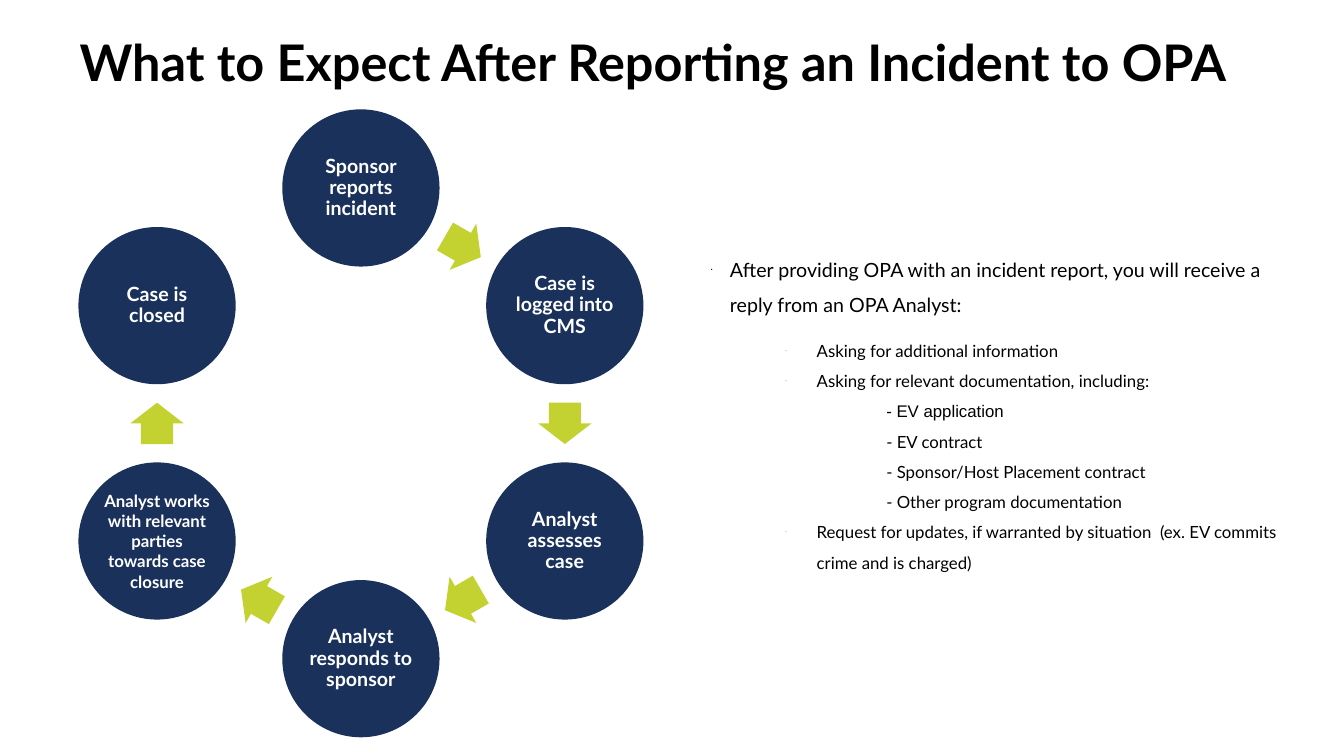
import math

import lxml.etree
import pptx
import pptx.dml.color
import pptx.enum.shapes
import pptx.enum.text
import pptx.oxml.ns
import pptx.util

TITLE = "What to Expect After Reporting an Incident to OPA"
STEPS = [  # text, size, line spacing; clockwise from the top
    ("Sponsor reports incident", 14, 0.9),
    ("Case is logged into CMS", 14, 0.9),
    ("Analyst assesses case", 14, 0.9),
    ("Analyst responds to sponsor", 14, 0.9),
    ("Analyst works with relevant parties towards case closure", 12, 1.0),
    ("Case is closed", 14, 0.9),
]
INTRO = [
    ("After providing OPA with an incident report, you will receive a reply from an OPA Analyst:", "intro", "Lato"),
]
REPLIES = [
    ("Asking for additional information", "reply", "Lato"),
    ("Asking for relevant documentation, including:", "reply", "Lato"),
    ("- EV application", "document", "Arial"),
    ("- EV contract", "document", "Lato"),
    ("- Sponsor/Host Placement contract", "document", "Lato"),
    ("- Other program documentation", "document", "Lato"),
    ("Request for updates, if warranted by situation  (ex. EV commits crime and is charged)", "reply", "Lato"),
]
LIST_STYLES = {  # level, size, left margin, first-line indent, bullet
    "intro": (0, 14, 0.19, -0.19, "•"),
    "reply": (1, 12, 0.31, -0.31, "-"),
    "document": (2, 12, 1.0, 0, None),
}
NAVY, LIME, WHITE, BLACK = "1A315C", "C4D231", "FFFFFF", "000000"
SLIDE_SIZE = (13.33, 7.5)
TITLE_BOX = (0.69, 0.25, 12.89, 0.71)
INTRO_BOX = (7, 2.39, 5.95, 0.78)
REPLIES_BOX = (7.69, 3.23, 5.22, 2.94)
RING_CENTER, RING_RADIUS = (3.58, 4.2), 2.335
CIRCLE_SIZE, ARROW_SIZE = (1.56, 1.56), (0.41, 0.53)

inches = pptx.util.Inches
ANCHOR = pptx.enum.text.MSO_ANCHOR
ALIGN = pptx.enum.text.PP_ALIGN
SHAPE = pptx.enum.shapes.MSO_SHAPE


def color(value):
    return pptx.dml.color.RGBColor.from_string(value)


def set_values(target, values):
    for name, value in values.items():
        setattr(target, name, value)


def place(shape, box):
    set_values(shape, dict(zip(("left", "top", "width", "height"), map(inches, box))))


def set_frame(frame, anchor, across=0.1, down=0.05):
    set_values(frame, {
        "word_wrap": True,
        "auto_size": pptx.enum.text.MSO_AUTO_SIZE.NONE,
        "vertical_anchor": anchor,
        "margin_left": inches(across), "margin_right": inches(across),
        "margin_top": inches(down), "margin_bottom": inches(down),
    })


def write(paragraph, text, size, fill, font="Lato", bold=False, align=ALIGN.LEFT, spacing=1.0):
    set_values(paragraph, {
        "alignment": align, "line_spacing": spacing,
        "space_before": pptx.util.Pt(0), "space_after": pptx.util.Pt(0),
    })
    run = paragraph.add_run()
    run.text = text
    set_values(run.font, {"size": pptx.util.Pt(size), "name": font, "bold": bold})
    run.font.color.rgb = color(fill)


def set_bullet(paragraph, margin, indent, character):
    properties = paragraph._p.get_or_add_pPr()
    properties.set("marL", str(inches(margin)))
    properties.set("indent", str(inches(indent)))

    def add(parent, tag, **attributes):
        return lxml.etree.SubElement(parent, pptx.oxml.ns.qn(tag), **attributes)

    if character is None:
        add(properties, "a:buNone")
        return
    add(add(properties, "a:buClr"), "a:srgbClr", val=BLACK)
    add(properties, "a:buSzPct", val="25000")
    add(properties, "a:buFont", typeface="Arial")
    add(properties, "a:buChar", char=character)


def fill_list(placeholder, box, items, inset):
    place(placeholder, box)
    frame = placeholder.text_frame
    set_frame(frame, ANCHOR.TOP, inset, 0.05)
    for number, (text, style, font) in enumerate(items):
        level, size, margin, indent, character = LIST_STYLES[style]
        paragraph = frame.add_paragraph() if number else frame.paragraphs[0]
        paragraph.level = level
        write(paragraph, text, size, BLACK, font, spacing=1.5)
        set_bullet(paragraph, margin, indent, character)


def ring_point(step):
    angle = math.radians(60 * step - 90)
    return (RING_CENTER[0] + RING_RADIUS * math.cos(angle),
            RING_CENTER[1] + RING_RADIUS * math.sin(angle))


def add_centered(slide, kind, center, size, fill):
    left, top = (middle - length / 2 for middle, length in zip(center, size))
    shape = slide.shapes.add_shape(kind, *map(inches, (left, top, *size)))
    shape.shadow.inherit = False
    shape.fill.solid()
    shape.fill.fore_color.rgb = color(fill)
    shape.line.fill.background()
    return shape


def add_cycle(slide):
    for step, (text, size, spacing) in enumerate(STEPS):
        here, following = ring_point(step), ring_point(step + 1)
        circle = add_centered(slide, SHAPE.OVAL, here, CIRCLE_SIZE, NAVY)
        set_frame(circle.text_frame, ANCHOR.MIDDLE, 0.02, 0.02)
        write(circle.text_frame.paragraphs[0], text, size, WHITE,
              bold=True, align=ALIGN.CENTER, spacing=spacing)
        if step < len(STEPS) - 1:
            midpoint = [(a + b) / 2 for a, b in zip(here, following)]
            arrow = add_centered(slide, SHAPE.RIGHT_ARROW, midpoint, ARROW_SIZE, LIME)
            arrow.rotation = 30 + 60 * step
            arrow.adjustments[0], arrow.adjustments[1] = 0.6, 0.5


def main():
    presentation = pptx.Presentation()
    presentation.slide_width, presentation.slide_height = map(inches, SLIDE_SIZE)
    slide = presentation.slides.add_slide(presentation.slide_layouts.get_by_name("Two Content"))
    title, intro, replies = slide.placeholders
    place(title, TITLE_BOX)
    set_frame(title.text_frame, ANCHOR.BOTTOM)
    write(title.text_frame.paragraphs[0], TITLE, 36, BLACK, bold=True)
    add_cycle(slide)
    fill_list(intro, INTRO_BOX, INTRO, 0.05)
    fill_list(replies, REPLIES_BOX, REPLIES, 0.1)
    presentation.save("out.pptx")


if __name__ == "__main__":
    main()
